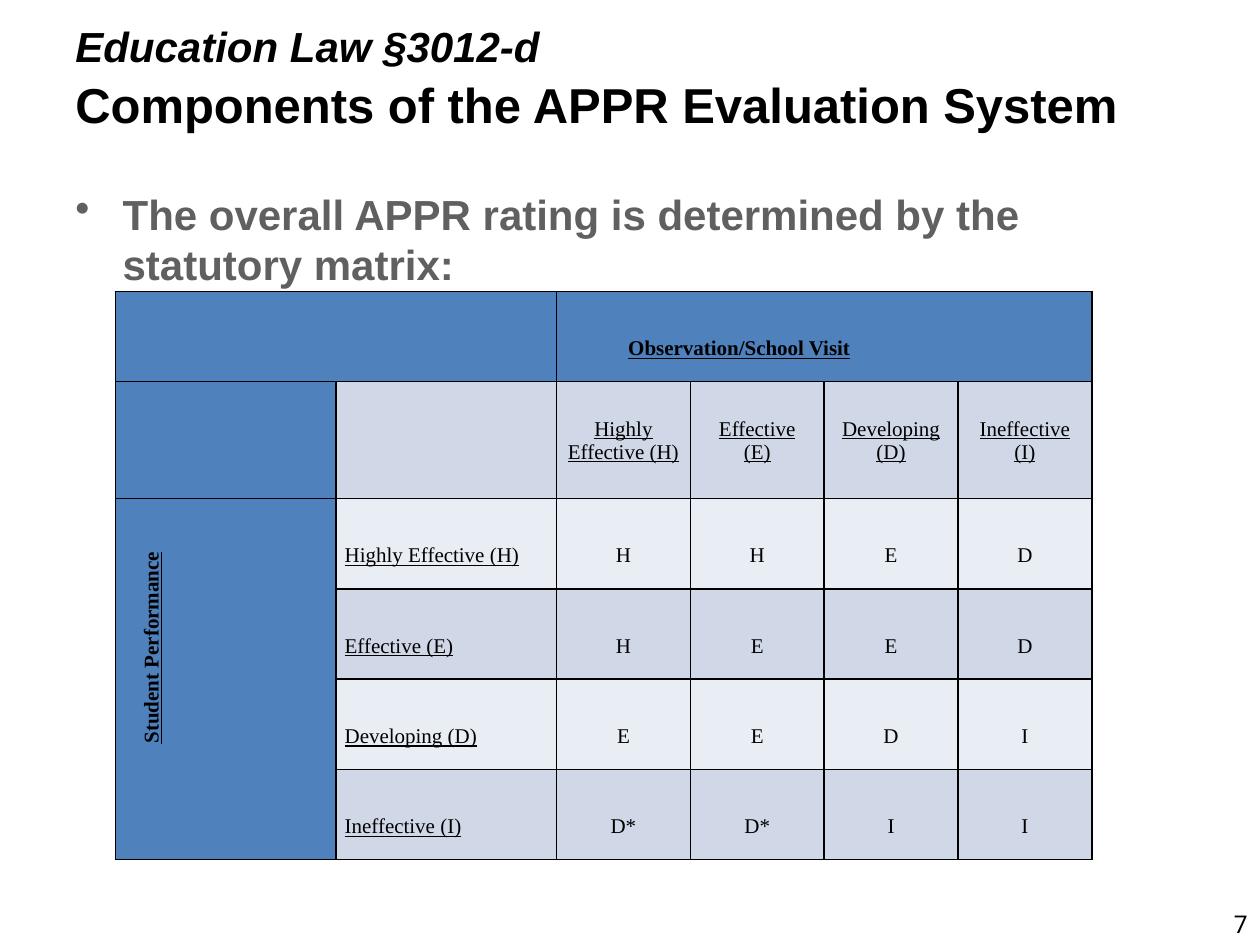
import pptx
import pptx.dml.color
import pptx.enum.text
import pptx.oxml
import pptx.oxml.ns
import pptx.util

Pt = pptx.util.Pt
ALIGN = pptx.enum.text.PP_ALIGN
MIDDLE = pptx.enum.text.MSO_ANCHOR.MIDDLE

COLORS = {
    "black": "000000",
    "gray": "606060",
    "header": "4F81BD",
    "dark_band": "D0D8E8",
    "light_band": "E9EDF4",
}
COLUMN_WIDTHS = [126, 126] + [76.5] * 4
ROW_HEIGHTS = [51.6, 66.8] + [51.6] * 4
COLUMN_LABELS = [["Highly Effective (H)"], ["Effective", "(E)"], ["Developing", "(D)"], ["Ineffective", "(I)"]]
RATINGS = [
    ("Highly Effective (H)", ["H", "H", "E", "D"]),
    ("Effective (E)", ["H", "E", "E", "D"]),
    ("Developing (D)", ["E", "E", "D", "I"]),
    ("Ineffective (I)", ["D*", "D*", "I", "I"]),
]


def rgb(name):
    return pptx.dml.color.RGBColor.from_string(COLORS[name])


def add_span(para, text, size, font="Arial", color="black", bold=False, italic=False, underline=False):
    span = para.add_run()
    span.text = text
    span.font.name = font
    span.font.size = Pt(size)
    span.font.bold = bold
    span.font.italic = italic
    span.font.underline = underline
    span.font.color.rgb = rgb(color)


def add_box(page, left, top, width, height):
    box = page.shapes.add_textbox(Pt(left), Pt(top), Pt(width), Pt(height))
    box.text_frame.word_wrap = True
    return box.text_frame


def add_title(page):
    frame = add_box(page, 36, 10.8, 648, 59)
    frame.vertical_anchor = MIDDLE
    para = frame.paragraphs[0]
    para.line_spacing = Pt(36)
    add_span(para, "Education Law §3012-d", 24, bold=True, italic=True)
    para.add_line_break()
    add_span(para, "Components of the APPR Evaluation System", 28, bold=True)


def add_bullet(page):
    para = add_box(page, 36, 104, 648, 385).paragraphs[0]
    properties = para._p.get_or_add_pPr()
    properties.set("marL", str(Pt(27)))
    properties.set("indent", str(-Pt(27)))
    bullet = pptx.oxml.parse_xml(f'<a:buChar {pptx.oxml.ns.nsdecls("a")} char="•"/>')
    properties.append(bullet)
    add_span(para, "The overall APPR rating is determined by the statutory matrix:", 24, color="gray", bold=True)


def add_page_number(page):
    para = add_box(page, 552, 516, 168, 24).paragraphs[0]
    para.alignment = ALIGN.RIGHT
    add_span(para, "7", 14, font="Roboto")


def style_cell(cell, color):
    properties = cell._tc.get_or_add_tcPr()
    for side in ("lnL", "lnR", "lnT", "lnB"):
        properties.append(pptx.oxml.parse_xml(
            f'<a:{side} {pptx.oxml.ns.nsdecls("a")} w="{Pt(1)}"><a:solidFill>'
            f'<a:srgbClr val="{COLORS["black"]}"/></a:solidFill></a:{side}>'))
    cell.fill.solid()
    cell.fill.fore_color.rgb = rgb(color)
    cell.vertical_anchor = MIDDLE
    cell.margin_left = cell.margin_right = Pt(5)
    cell.margin_top = Pt(0.7)
    cell.margin_bottom = Pt(0)


def write_cell(cell, lines, align=ALIGN.CENTER, spacing=2, indent=0, bold=False, underline=False):
    frame = cell.text_frame
    for index, line in enumerate(lines):
        para = frame.add_paragraph() if index else frame.paragraphs[0]
        para.alignment = align
        para.line_spacing = spacing
        if indent:
            para._p.get_or_add_pPr().set("indent", str(Pt(indent)))
        add_span(para, line, 12, font="Times New Roman", bold=bold, underline=underline)


def cell_color(row, column):
    if row == 0 or column == 0:
        return "header"
    return "dark_band" if row % 2 else "light_band"


def add_matrix(page):
    table = page.shapes.add_table(
        len(ROW_HEIGHTS), len(COLUMN_WIDTHS), Pt(66), Pt(166.5),
        Pt(sum(COLUMN_WIDTHS)), Pt(sum(ROW_HEIGHTS))).table
    for column, width in zip(table.columns, COLUMN_WIDTHS):
        column.width = Pt(width)
    for row, height in zip(table.rows, ROW_HEIGHTS):
        row.height = Pt(height)
    for row in range(len(ROW_HEIGHTS)):
        for column in range(len(COLUMN_WIDTHS)):
            style_cell(table.cell(row, column), cell_color(row, column))

    table.cell(0, 0).merge(table.cell(0, 1))
    table.cell(0, 2).merge(table.cell(0, 5))
    table.cell(2, 0).merge(table.cell(5, 0))

    write_cell(table.cell(0, 2), ["Observation/School Visit"], ALIGN.LEFT, indent=36, bold=True, underline=True)
    side = table.cell(2, 0)
    side._tc.get_or_add_tcPr().set("vert", "vert270")
    write_cell(side, ["Student Performance"], indent=36, bold=True, underline=True)

    for column, lines in enumerate(COLUMN_LABELS, start=2):
        write_cell(table.cell(1, column), lines, spacing=1, underline=True)
    for row, (label, grades) in enumerate(RATINGS, start=2):
        write_cell(table.cell(row, 1), [label], ALIGN.LEFT, underline=True)
        for column, grade in enumerate(grades, start=2):
            write_cell(table.cell(row, column), [grade])


def main():
    deck = pptx.Presentation()
    deck.slide_width = Pt(720)
    deck.slide_height = Pt(540)
    page = deck.slides.add_slide(deck.slide_layouts[6])
    add_title(page)
    add_bullet(page)
    add_page_number(page)
    add_matrix(page)
    deck.save("out.pptx")


if __name__ == "__main__":
    main()
